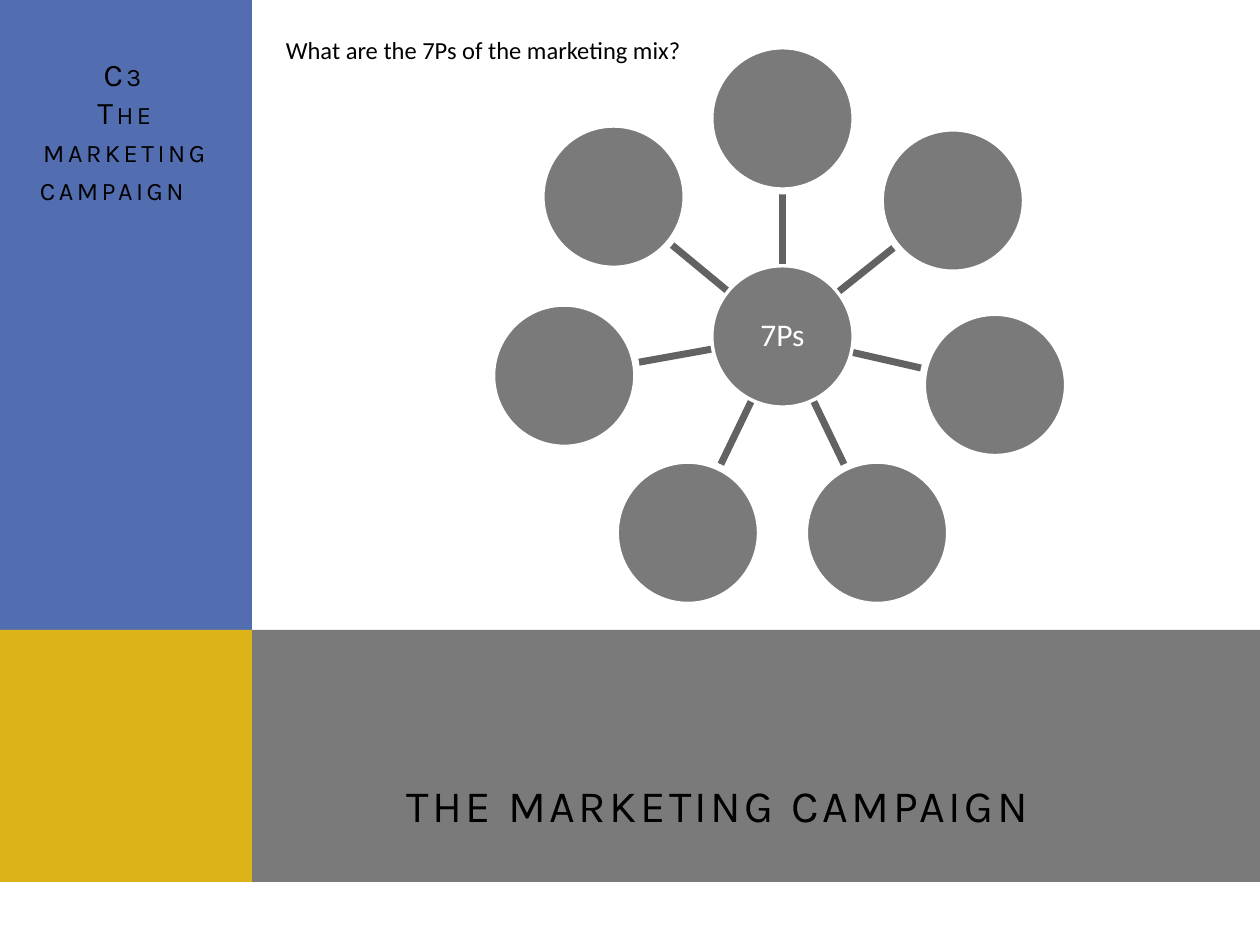
import math
from dataclasses import dataclass
from lxml import etree
from pptx import Presentation
from pptx.dml.color import RGBColor
from pptx.enum import shapes, text
from pptx.oxml.ns import qn
from pptx.util import Inches, Pt


@dataclass(frozen=True)
class Theme:
    grey: str = "7A7A7A"
    blue: str = "526DB0"
    gold: str = "F5C201"
    spoke: str = "626262"
    white: str = "FFFFFF"
    black: str = "000000"
    head: str = "Karla"
    body: str = "Calibri"
    big: int = 32
    mid: int = 18
    small: int = 14
    edge: int = 4


T = Theme()
W, H = 10, 7.5
COL, ROW = W / 5, H / 7.5  # side column width, row height
CAPS = {"cap": "small", "spc": "200"}


def place(shape, box):
    names = ("left", "top", "width", "height")
    for name, size in zip(names, box):
        setattr(shape, name, Inches(size))


def write(shape, lines, face, size, color, align, anchor, caps=None, **para):
    frame = shape.text_frame
    form = {"word_wrap": True, "auto_size": text.MSO_AUTO_SIZE.NONE,
            "vertical_anchor": anchor}
    for name, value in form.items():
        setattr(frame, name, value)
    frame.text = "\n".join(lines)
    for p in frame.paragraphs:
        for name, value in {"alignment": align, **para}.items():
            setattr(p, name, value)
        run = p.runs[0]
        for name, value in {"name": face, "size": Pt(size)}.items():
            setattr(run.font, name, value)
        run.font.color.rgb = RGBColor.from_string(color)
        for name, value in (caps or {}).items():
            run.font._element.set(name, value)


def solid(slide, kind, box, color, edge=None, alpha=None):
    shape = slide.shapes.add_shape(kind, *map(Inches, box))
    shape.shadow.inherit = False
    shape.fill.solid()
    shape.fill.fore_color.rgb = RGBColor.from_string(color)
    if edge:
        shape.line.color.rgb = RGBColor.from_string(edge)
        shape.line.width = Pt(T.edge)
    else:
        shape.line.fill.background()
    if alpha:
        tint = shape._element.spPr.find(qn("a:solidFill"))[0]
        etree.SubElement(tint, qn("a:alpha"), val=str(alpha * 1000))
    return shape


def label(slide, box, *args, **form):
    shape = slide.shapes.add_textbox(*map(Inches, box))
    write(shape, *args, **form)


def side(slide, box):
    x, y, w, h = box
    solid(slide, shapes.MSO_SHAPE.RECTANGLE, box, T.blue)
    label(slide, (x, y + 0.39, w, 1.4), ["C3", "The marketing campaign"],
          T.head, T.mid, T.black, text.PP_ALIGN.CENTER,
          text.MSO_ANCHOR.TOP, caps=CAPS)


def foot(slide, box):
    x, y, w, h = box
    rect = shapes.MSO_SHAPE.RECTANGLE
    solid(slide, rect, box, T.grey)
    solid(slide, rect, (x, y, COL, h), T.gold, alpha=80)
    title = slide.shapes.title
    place(title, (COL, y + 0.17, w - COL, 1.5))
    write(title, ["the marketing campaign"], T.head, T.big, T.black,
          text.PP_ALIGN.CENTER, text.MSO_ANCHOR.BOTTOM, caps=CAPS)
    slide.shapes._spTree.append(title._element)  # bring to front


def spoke(slide, start, end):
    line = slide.shapes.add_connector(
        shapes.MSO_CONNECTOR.STRAIGHT, *map(Inches, start + end))
    line.line.color.rgb = RGBColor.from_string(T.spoke)
    line.line.width = Pt(T.edge)
    etree.SubElement(line._element.spPr, qn("a:effectLst"))


def wheel(slide, box):
    x, y, w, h = box
    hub = (x + 2.31, y + 2.3)
    rad = 0.575

    def point(turn, reach):
        a = math.radians(turn)
        return hub[0] + reach * math.sin(a), hub[1] - reach * math.cos(a)

    def disc(mid):
        return solid(slide, shapes.MSO_SHAPE.OVAL,
                     (mid[0] - rad, mid[1] - rad, 2 * rad, 2 * rad),
                     T.grey, edge=T.white)

    core = disc(hub)
    write(core, ["7Ps"], T.body, T.mid, T.white, text.PP_ALIGN.CENTER,
          text.MSO_ANCHOR.MIDDLE, line_spacing=0.9)
    # Five even steps; the last two discs sit slightly off the ring
    ring = [(i * 360 / 7, 1.73) for i in range(5)]
    for turn, reach in ring + [(259.8, 1.76), (309.6, 1.74)]:
        spoke(slide, point(turn, rad), point(turn, reach - rad))
        disc(point(turn, reach))


def main():
    deck = Presentation()
    deck.slide_width, deck.slide_height = Inches(W), Inches(H)
    slide = deck.slides.add_slide(deck.slide_layouts[5])
    # Side column and footer band
    side(slide, (0, 0, COL, 7 * ROW))
    foot(slide, (0, 5 * ROW, W, 2 * ROW))
    # Hub and spokes
    wheel(slide, (3.9, 0.37, 4.57, 4.43))
    # Question
    label(slide, (COL + 0.17, 0.23, 3.54, 0.34),
          ["What are the 7Ps of the marketing mix?"], T.body, T.small,
          T.black, text.PP_ALIGN.LEFT, text.MSO_ANCHOR.TOP)
    deck.save("out.pptx")


if __name__ == "__main__":
    main()
